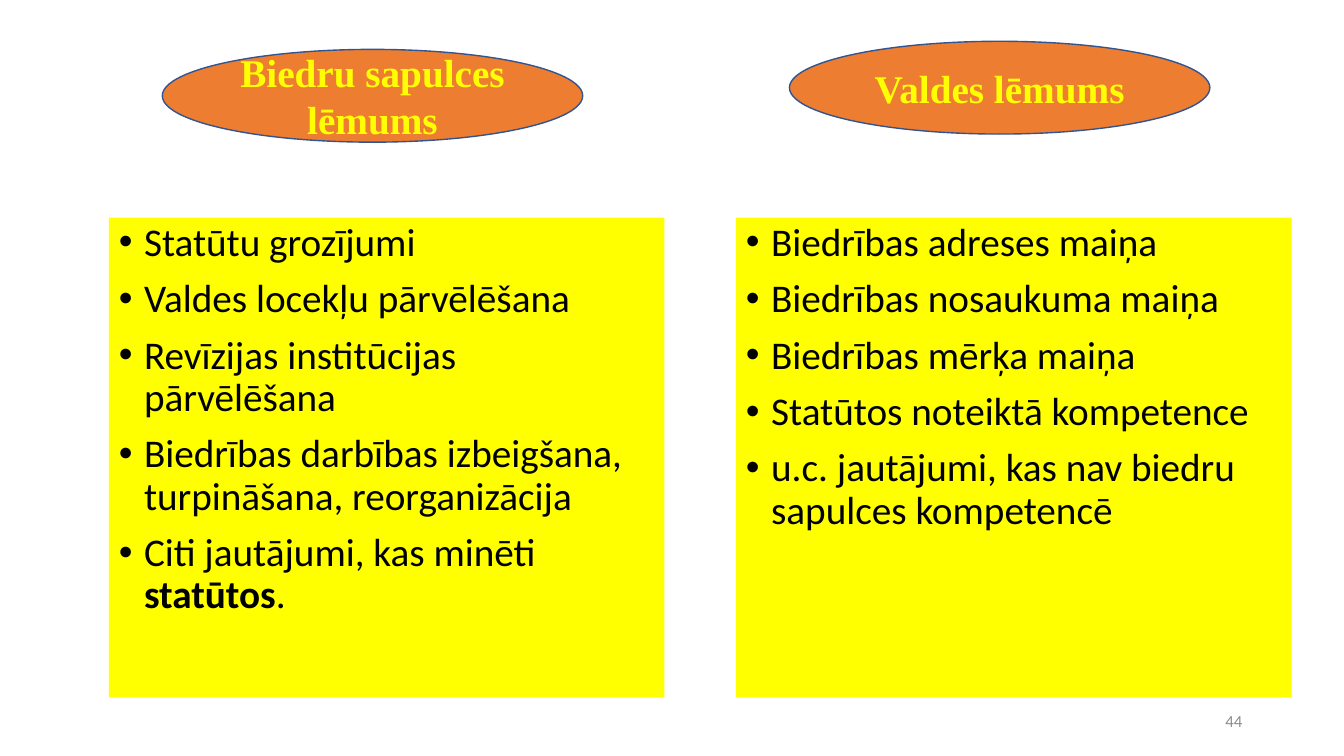
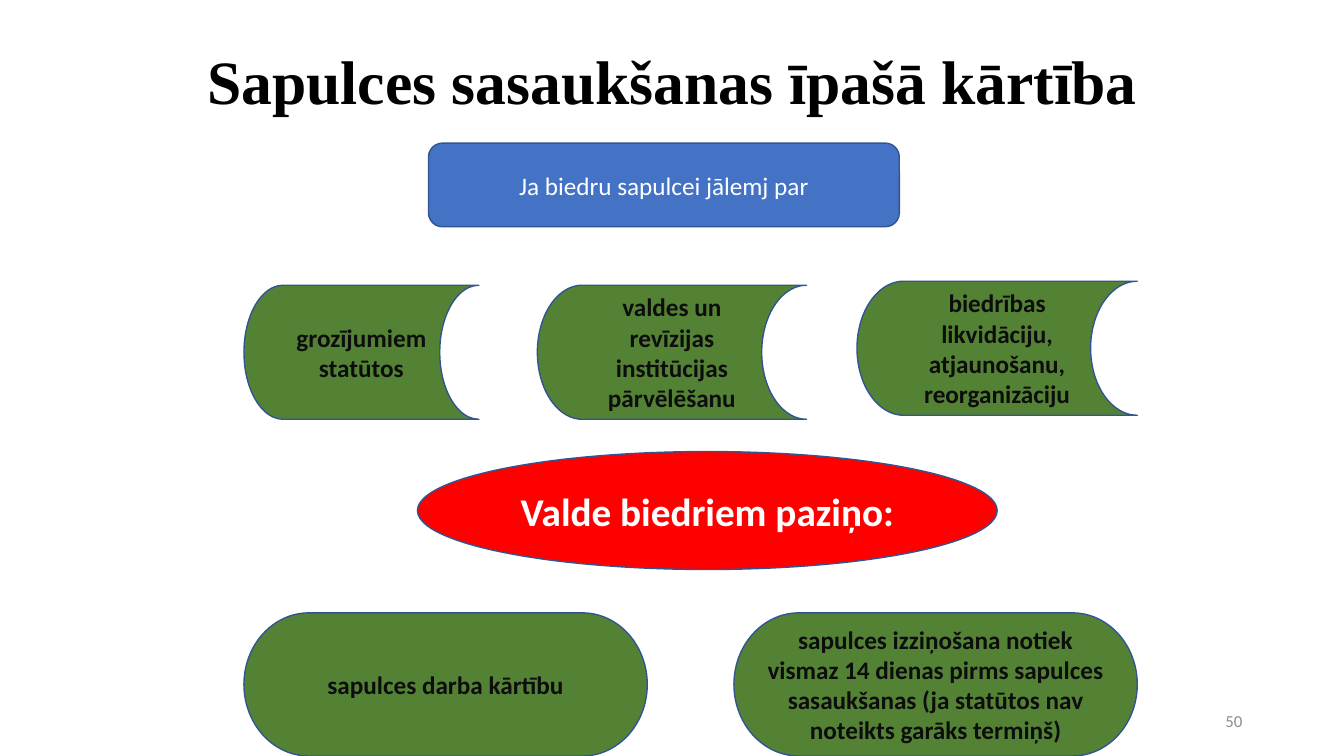
import pptx
import pptx.dml.color
import pptx.enum.shapes
import pptx.enum.text
import pptx.oxml.ns
import pptx.util
from lxml import etree

Inches = pptx.util.Inches
Pt = pptx.util.Pt
SHAPE = pptx.enum.shapes.MSO_SHAPE
ALIGN = pptx.enum.text.PP_ALIGN
ANCHOR = pptx.enum.text.MSO_ANCHOR


def color(value):
    return pptx.dml.color.RGBColor.from_string(value)


class Slides:
    SANS = "Calibri"
    SERIF = "Times New Roman"
    BLACK = "000000"
    INK = "0D0D0D"
    WHITE = "FFFFFF"
    YELLOW = "FFFF00"
    ORANGE = "ED7D31"
    BLUE = "4472C4"
    GREEN = "548235"
    RED = "FF0000"
    OUTLINE = "325491"
    GRAY = "8C8C8C"
    TITLE_ONLY, BLANK = 5, 6

    def __init__(self):
        self.deck = pptx.Presentation()
        self.deck.slide_width = Inches(13.33)
        self.deck.slide_height = Inches(7.5)
        self.page = None

    def add_page(self, number, title=None):
        layout = self.BLANK if title is None else self.TITLE_ONLY
        self.page = self.deck.slides.add_slide(self.deck.slide_layouts[layout])
        if title is not None:
            self.title(title)
        box = self.page.shapes.add_textbox(
            Inches(9.42), Inches(6.95), Inches(3), Inches(0.4))
        self.label(box, str(number), 12, self.GRAY, align=ALIGN.RIGHT)

    def title(self, text):
        box = self.page.shapes.title
        box.left, box.top = Inches(0.92), Inches(0.4)
        box.width, box.height = Inches(11.5), Inches(0.87)
        self.label(box, text, 44, self.BLACK, bold=True, font=self.SERIF)
        box.text_frame.paragraphs[0].line_spacing = 0.9

    def style(self, para, size, ink, bold, font):
        for span in para.runs:
            span.font.name = font
            span.font.size = Pt(size)
            span.font.color.rgb = color(ink)
            span.font.bold = bold

    def label(self, box, text, size, ink, bold=False, font=SANS, align=ALIGN.CENTER):
        frame = box.text_frame
        frame.text = text
        frame.word_wrap = True
        frame.auto_size = pptx.enum.text.MSO_AUTO_SIZE.NONE
        frame.vertical_anchor = ANCHOR.MIDDLE
        para = frame.paragraphs[0]
        para.alignment = align
        self.style(para, size, ink, bold, font)

    def shape(self, kind, left, top, width, height, fill, outlined=True):
        box = self.page.shapes.add_shape(
            kind, Inches(left), Inches(top), Inches(width), Inches(height))
        box.shadow.inherit = False
        box.fill.solid()
        box.fill.fore_color.rgb = color(fill)
        if outlined:
            box.line.color.rgb = color(self.OUTLINE)
            box.line.width = Pt(1)
        else:
            box.line.fill.background()
        return box

    def heading(self, left, top, text):
        box = self.shape(SHAPE.OVAL, left, top, 4.17, 0.92, self.ORANGE)
        self.label(box, text, 28, self.YELLOW, bold=True, font=self.SERIF)

    def green_box(self, kind, left, top, width, height, text):
        box = self.shape(kind, left, top, width, height, self.GREEN)
        self.label(box, text, 18, self.INK, bold=True)

    def bullet(self, para):
        para.alignment = ALIGN.LEFT
        para.line_spacing = 0.9
        para.space_before = Pt(10)
        properties = para._p.get_or_add_pPr()
        properties.set("marL", str(Inches(0.25)))
        properties.set("indent", str(-Inches(0.25)))
        for tag, name, value in (("buFont", "typeface", "Arial"), ("buChar", "char", "•")):
            mark = etree.SubElement(properties, pptx.oxml.ns.qn("a:" + tag))
            mark.set(name, value)

    def panel(self, left, items, strong=None):
        box = self.shape(SHAPE.RECTANGLE, left, 2.16, 5.51, 4.76, self.YELLOW, outlined=False)
        frame = box.text_frame
        frame.word_wrap = True
        frame.vertical_anchor = ANCHOR.TOP
        for index, item in enumerate(items):
            para = frame.add_paragraph() if index else frame.paragraphs[0]
            before, word, after = item.partition(strong) if strong else (item, "", "")
            for part in filter(None, (before, word, after)):
                para.add_run().text = part
            self.style(para, 28, self.BLACK, False, self.SANS)
            for span in para.runs:
                span.font.bold = span.text == strong
            self.bullet(para)


def decisions(slides):
    slides.add_page(44)
    slides.heading(1.61, 0.49, "Biedru sapulces lēmums")
    slides.heading(7.83, 0.41, "Valdes lēmums")
    slides.panel(1.08, [
        "Statūtu grozījumi",
        "Valdes locekļu pārvēlēšana",
        "Revīzijas institūcijas pārvēlēšana",
        "Biedrības darbības izbeigšana, turpināšana, reorganizācija",
        "Citi jautājumi, kas minēti statūtos.",
    ], strong="statūtos")
    slides.panel(7.3, [
        "Biedrības adreses maiņa",
        "Biedrības nosaukuma maiņa",
        "Biedrības mērķa maiņa",
        "Statūtos noteiktā kompetence",
        "u.c. jautājumi, kas nav biedru sapulces kompetencē",
    ])


def convening(slides):
    slides.add_page(50, "Sapulces sasaukšanas īpašā kārtība")
    condition = slides.shape(SHAPE.ROUNDED_RECTANGLE, 4.25, 1.42, 4.67, 0.83, slides.BLUE)
    slides.label(condition, "Ja biedru sapulcei jālemj par", 18, slides.WHITE)
    for left, top, width, text in (
        (2.42, 2.83, 2.33, "grozījumiem statūtos"),
        (5.33, 2.83, 2.67, "valdes un revīzijas institūcijas pārvēlēšanu"),
        (8.5, 2.79, 2.78, "biedrības likvidāciju, atjaunošanu, reorganizāciju"),
    ):
        slides.green_box(SHAPE.FLOWCHART_STORED_DATA, left, top, width, 1.33, text)
    notice = slides.shape(SHAPE.FLOWCHART_CONNECTOR, 4.14, 4.48, 5.75, 1.17, slides.RED)
    slides.label(notice, "Valde biedriem paziņo:", 28, slides.WHITE, bold=True)
    for left, text in (
        (2.42, "sapulces darba kārtību"),
        (7.28, "sapulces izziņošana notiek vismaz 14 dienas pirms sapulces "
               "sasaukšanas (ja statūtos nav noteikts garāks termiņš)"),
    ):
        slides.green_box(SHAPE.FLOWCHART_TERMINATOR, left, 6.08, 4, 1.42, text)


def main():
    slides = Slides()
    decisions(slides)
    convening(slides)
    slides.deck.save("out.pptx")


if __name__ == "__main__":
    main()
